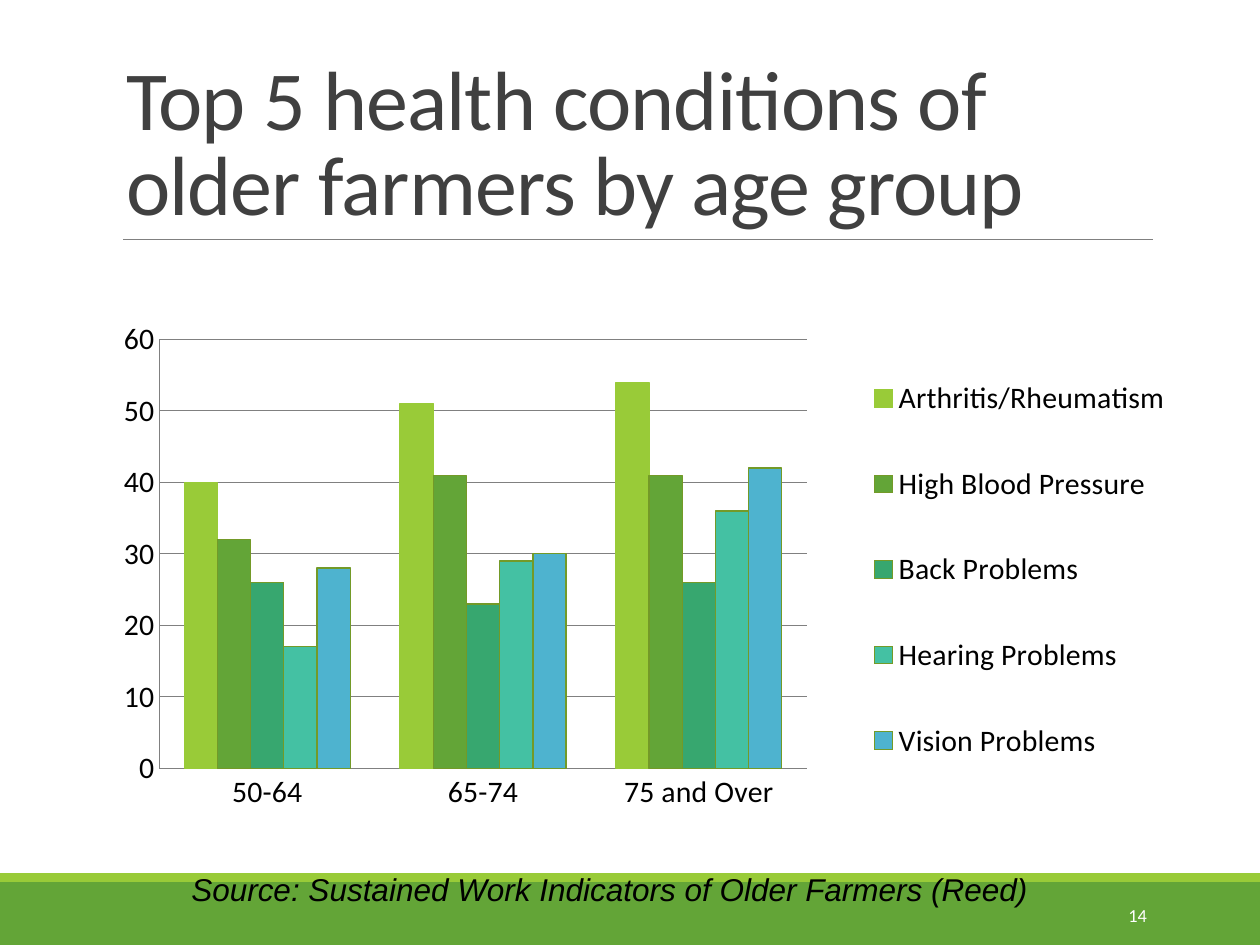
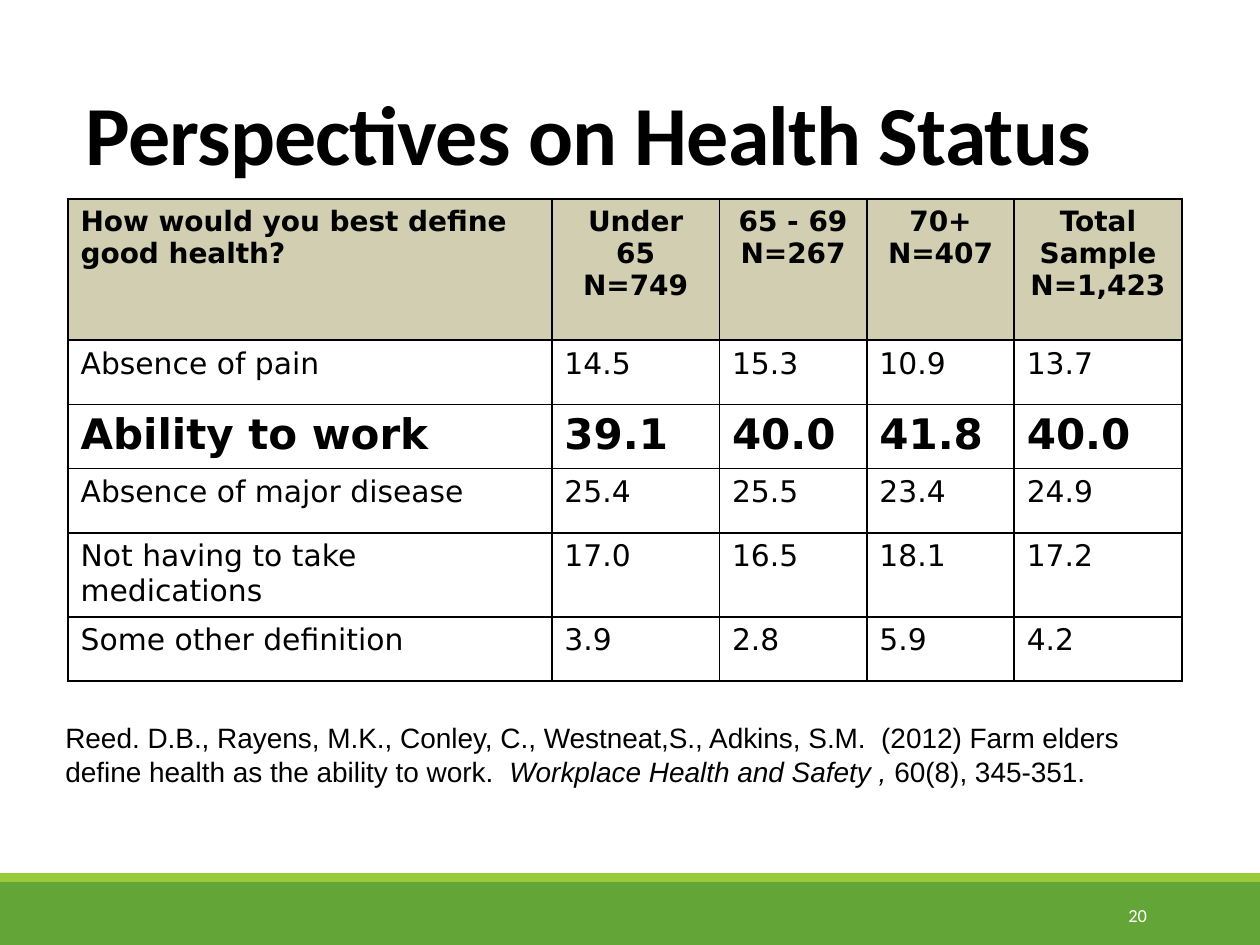
from lxml import etree
from pptx import Presentation
from pptx.chart.data import CategoryChartData
from pptx.dml.color import RGBColor
from pptx.enum.chart import XL_CHART_TYPE, XL_LEGEND_POSITION, XL_TICK_MARK
from pptx.enum.shapes import MSO_CONNECTOR, MSO_SHAPE
from pptx.enum.text import MSO_ANCHOR, PP_ALIGN
from pptx.oxml.ns import qn
from pptx.util import Inches, Pt

LEFT, CENTER, RIGHT = PP_ALIGN.LEFT, PP_ALIGN.CENTER, PP_ALIGN.RIGHT
TOP, MIDDLE, BOTTOM = MSO_ANCHOR.TOP, MSO_ANCHOR.MIDDLE, MSO_ANCHOR.BOTTOM
NO_TICK = XL_TICK_MARK.NONE

BLACK = RGBColor(0x00, 0x00, 0x00)
WHITE = RGBColor(0xFF, 0xFF, 0xFF)
CHARCOAL = RGBColor(0x40, 0x40, 0x40)
GRAY = RGBColor(0x80, 0x80, 0x80)
GREEN = RGBColor(0x63, 0xA5, 0x37)
LIME = RGBColor(0x99, 0xCB, 0x38)
OLIVE = RGBColor(0x73, 0x9A, 0x28)
JADE = RGBColor(0x37, 0xA7, 0x6F)
TEAL = RGBColor(0x44, 0xC1, 0xA3)
SKY = RGBColor(0x4E, 0xB3, 0xCF)
SAND = RGBColor(0xD2, 0xCE, 0xB1)

HEADING_FONT, NOTE_FONT, TABLE_FONT = "Calibri", "Arial", "DejaVu Sans"

AGE_GROUPS = ["50-64", "65-74", "75 and Over"]
# name, values by age group, fill, outline
CONDITIONS = [
    ("Arthritis/Rheumatism", (40, 51, 54), LIME, LIME),
    ("High Blood Pressure", (32, 41, 41), GREEN, OLIVE),
    ("Back Problems", (26, 23, 26), JADE, OLIVE),
    ("Hearing Problems", (17, 29, 36), TEAL, OLIVE),
    ("Vision Problems", (28, 30, 42), SKY, OLIVE),
]

HEALTH_ROWS = [
    ["How would you best define good health?", "Under 65\nN=749", "65 - 69\nN=267",
     "70+\nN=407", "Total Sample\nN=1,423"],
    ["Absence of pain", "14.5", "15.3", "10.9", "13.7"],
    ["Ability to work", "39.1", "40.0", "41.8", "40.0"],
    ["Absence of major disease", "25.4", "25.5", "23.4", "24.9"],
    ["Not having to take medications", "17.0", "16.5", "18.1", "17.2"],
    ["Some other definition", "3.9", "2.8", "5.9", "4.2"],
]
KEY_ROW = 2
COLUMN_WIDTHS = [3.84, 1.33, 1.17, 1.17, 1.33]
ROW_HEIGHTS = [1.12, 0.51, 0.51, 0.51, 0.61, 0.51]


def write(tf, text, font=NOTE_FONT, size=16, color=BLACK, bold=False, align=LEFT,
          anchor=TOP, line_spacing=None, tracking=None, italic=False):
    """Fill a text frame; text is a string or a list of (text, italic) runs."""
    tf.vertical_anchor = anchor
    runs = [(text, italic)] if isinstance(text, str) else text
    p = tf.paragraphs[0]
    paragraphs = [p]
    for run_text, run_italic in runs:
        for i, line in enumerate(run_text.split("\n")):
            if i:
                p = tf.add_paragraph()
                paragraphs.append(p)
            r = p.add_run()
            r.text = line
            r.font.name, r.font.size = font, Pt(size)
            r.font.bold, r.font.italic = bold, run_italic
            r.font.color.rgb = color
            if tracking is not None:
                r.font._element.set("spc", str(round(tracking * 100)))
    for p in paragraphs:
        p.alignment = align
        if line_spacing:
            p.line_spacing = line_spacing


def border_cell(cell, color, width):
    tc_pr = cell._tc.get_or_add_tcPr()
    for i, side in enumerate(("a:lnL", "a:lnR", "a:lnT", "a:lnB")):
        ln = etree.Element(qn(side), w=str(Pt(width)))
        fill = etree.SubElement(ln, qn("a:solidFill"))
        etree.SubElement(fill, qn("a:srgbClr"), val=str(color))
        tc_pr.insert(i, ln)


def place_chart_part(part, index, x, y, w, h, inner=False):
    """Give a plot area or legend a manual layout, in fractions of the chart."""
    for old in part.findall(qn("c:layout")):
        part.remove(old)
    layout = etree.Element(qn("c:layout"))
    manual = etree.SubElement(layout, qn("c:manualLayout"))
    settings = [("xMode", "edge"), ("yMode", "edge"), ("x", x), ("y", y), ("w", w), ("h", h)]
    if inner:
        settings.insert(0, ("layoutTarget", "inner"))
    for name, value in settings:
        etree.SubElement(manual, qn("c:" + name), val=str(value))
    part.insert(index, layout)


class Deck:
    """Holds the presentation, its style and the current slide."""

    def __init__(self):
        self.prs = Presentation()
        self.prs.slide_width, self.prs.slide_height = Inches(10), Inches(7.5)
        self.slide = None

    def new_slide(self, title, box, number, color=CHARCOAL, bold=False):
        self.slide = self.prs.slides.add_slide(self.prs.slide_layouts[5])
        self.band(7, 0.5, GREEN)
        self.band(6.93, 0.07, LIME)
        sp = self.slide.shapes.title
        sp.left, sp.top, sp.width, sp.height = map(Inches, box)
        write(sp.text_frame, title, font=HEADING_FONT, size=48, color=color, bold=bold,
              anchor=BOTTOM, line_spacing=0.85, tracking=-0.5)
        self.text((8.12, 7.06, 1.08, 0.4), str(number), font=HEADING_FONT, size=10.5,
                  color=WHITE, align=RIGHT, anchor=MIDDLE)

    def band(self, top, height, color):
        sp = self.slide.shapes.add_shape(MSO_SHAPE.RECTANGLE, 0, Inches(top),
                                         self.prs.slide_width, Inches(height))
        sp.shadow.inherit = False
        sp.fill.solid()
        sp.fill.fore_color.rgb = color
        sp.line.fill.background()

    def rule(self, left, right, y):
        line = self.slide.shapes.add_connector(
            MSO_CONNECTOR.STRAIGHT, Inches(left), Inches(y), Inches(right), Inches(y))
        line.line.color.rgb, line.line.width = GRAY, Pt(0.5)
        etree.SubElement(line._element.spPr, qn("a:effectLst"))

    def text(self, box, text, wrap=True, **style):
        sp = self.slide.shapes.add_textbox(*map(Inches, box))
        sp.text_frame.word_wrap = wrap
        write(sp.text_frame, text, **style)

    def column_chart(self, box, categories, series, plot_box, legend_box):
        data = CategoryChartData()
        data.categories = categories
        for name, values, _, _ in series:
            data.add_series(name, values)
        chart = self.slide.shapes.add_chart(
            XL_CHART_TYPE.COLUMN_CLUSTERED, *map(Inches, box), data).chart
        chart.has_title = False
        chart.font.name, chart.font.size = HEADING_FONT, Pt(17)
        chart.font.color.rgb = BLACK

        plot = chart.plots[0]
        plot.gap_width, plot.overlap, plot.vary_by_categories = 150, 0, False
        for s, (_, _, fill, outline) in zip(plot.series, series):
            s.format.fill.solid()
            s.format.fill.fore_color.rgb = fill
            s.format.line.color.rgb, s.format.line.width = outline, Pt(0.75)

        values = chart.value_axis
        values.minimum_scale, values.maximum_scale, values.major_unit = 0, 60, 10
        values.has_major_gridlines = True
        for axis in (values, chart.category_axis):
            axis.major_tick_mark = axis.minor_tick_mark = NO_TICK
        for lines in (values, chart.category_axis, values.major_gridlines):
            lines.format.line.color.rgb, lines.format.line.width = GRAY, Pt(0.75)

        chart.has_legend = True
        chart.legend.position = XL_LEGEND_POSITION.RIGHT
        chart.legend.include_in_layout = False
        plot_area = chart.element.find(".//" + qn("c:plotArea"))
        legend = chart.element.find(".//" + qn("c:legend"))
        place_chart_part(plot_area, 0, *plot_box, inner=True)
        place_chart_part(legend, 1, *legend_box)

    def table(self, left, top, rows, widths, heights, key_row):
        table = self.slide.shapes.add_table(
            len(rows), len(widths), Inches(left), Inches(top),
            Inches(sum(widths)), Inches(sum(heights))).table
        table.first_row = table.horz_banding = False
        for column, width in zip(table.columns, widths):
            column.width = Inches(width)
        for row, height in zip(table.rows, heights):
            row.height = Inches(height)
        for i, row in enumerate(rows):
            header = i == 0
            size = 16 if header else 24 if i == key_row else 17
            for j, text in enumerate(row):
                cell = table.cell(i, j)
                if header:
                    cell.fill.solid()
                    cell.fill.fore_color.rgb = SAND
                else:
                    cell.fill.background()
                border_cell(cell, BLACK, 1)
                write(cell.text_frame, text, font=TABLE_FONT, size=size,
                      bold=header or i == key_row, align=CENTER if header and j else LEFT)


def main():
    deck = Deck()

    deck.new_slide("Top 5 health conditions of older farmers by age group",
                   (0.9, 0.31, 8.25, 1.59), 14)
    deck.rule(0.98, 9.15, 1.9)
    deck.column_chart((0.42, 1.83, 9.08, 5.33), AGE_GROUPS, CONDITIONS,
                      plot_box=(0.093, 0.162, 0.566, 0.639),
                      legend_box=(0.7, 0.15, 0.29, 0.71))
    deck.text((1.42, 6.86, 7.24, 0.4),
              "Source: Sustained Work Indicators of Older Farmers (Reed)",
              wrap=False, size=18, italic=True)

    deck.new_slide("Perspectives on Health Status", (0.58, 0.42, 8.75, 1.08), 20,
                   color=BLACK, bold=True)
    deck.table(0.54, 1.58, HEALTH_ROWS, COLUMN_WIDTHS, ROW_HEIGHTS, KEY_ROW)
    deck.text((0.42, 5.67, 9.08, 0.64), [
        ("Reed. D.B., Rayens, M.K., Conley, C., Westneat,S., Adkins, S.M.  (2012) "
         "Farm elders define health as the ability to work.  ", False),
        ("Workplace Health and Safety , ", True),
        ("60(8), 345-351.", False),
    ])

    deck.prs.save("out.pptx")


if __name__ == "__main__":
    main()
